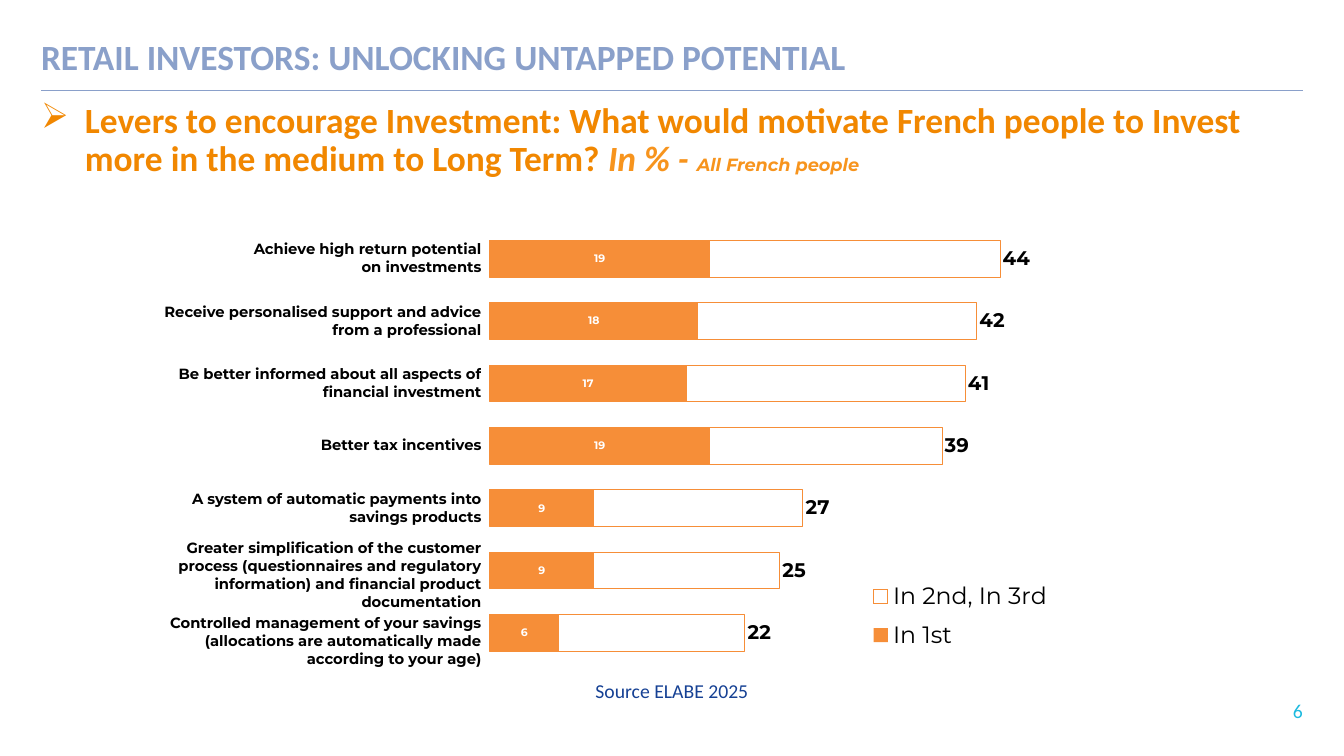
from dataclasses import dataclass

from lxml import etree
from pptx import Presentation
from pptx.chart.data import CategoryChartData
from pptx.dml.color import RGBColor
from pptx.enum.chart import XL_CHART_TYPE, XL_LABEL_POSITION, XL_LEGEND_POSITION
from pptx.enum.shapes import MSO_CONNECTOR
from pptx.enum.text import MSO_ANCHOR, PP_ALIGN
from pptx.oxml import parse_xml
from pptx.oxml.ns import nsdecls, qn
from pptx.util import Inches, Pt

BARS = XL_CHART_TYPE.BAR_CLUSTERED
CENTER, OUTSIDE = XL_LABEL_POSITION.CENTER, XL_LABEL_POSITION.OUTSIDE_END
LEGEND_RIGHT = XL_LEGEND_POSITION.RIGHT
STRAIGHT = MSO_CONNECTOR.STRAIGHT
MIDDLE, TOP = MSO_ANCHOR.MIDDLE, MSO_ANCHOR.TOP
LEFT, RIGHT = PP_ALIGN.LEFT, PP_ALIGN.RIGHT


@dataclass(frozen=True)
class Theme:
    text_font: str = "Calibri"
    chart_font: str = "Montserrat"
    title: str = "8AA0CA"
    question: str = "F18700"
    scope: str = "F7941D"
    bar: str = "F68E38"
    source: str = "164194"
    number: str = "1DBADF"
    black: str = "000000"
    white: str = "FFFFFF"
    heading_size: int = 36
    legend_size: int = 24
    note_size: int = 20
    scope_size: int = 18
    lever_size: int = 15
    first_size: int = 11


THEME = Theme()
WIDTH, HEIGHT = 18.98, 10.67
MARGIN = 0.58
ROW = 0.88
LEVERS = [
    ("Achieve high return potential\non investments", 19, 44),
    ("Receive personalised support and advice from a professional", 18, 42),
    ("Be better informed about all aspects of financial investment", 17, 41),
    ("Better tax incentives", 19, 39),
    ("A system of automatic payments into savings products", 9, 27),
    ("Greater simplification of the customer process (questionnaires and "
     "regulatory information) and financial product documentation", 9, 25),
    ("Controlled management of your savings (allocations are automatically "
     "made according to your age)", 6, 22),
]


def style(font, size, color, name=THEME.text_font, bold=False, italic=False):
    font.size, font.name, font.bold, font.italic = Pt(size), name, bold, italic
    font.color.rgb = RGBColor.from_string(color)


def add_text_frame(slide, box, inset=0.0, anchor=TOP):
    frame = slide.shapes.add_textbox(*map(Inches, box)).text_frame
    frame.word_wrap = True
    frame.vertical_anchor = anchor
    frame.margin_left = frame.margin_right = Inches(inset)
    frame.margin_top = frame.margin_bottom = Inches(inset / 2)
    return frame


def add_line_of_text(slide, box, text, size, color, align=LEFT, bold=False, **placing):
    paragraph = add_text_frame(slide, box, **placing).paragraphs[0]
    paragraph.text = text
    paragraph.alignment = align
    style(paragraph.font, size, color, bold=bold)


def add_header(slide, box):
    left, top, width, height = box
    add_line_of_text(slide, (left, top, width, 0.5),
                     "RETAIL INVESTORS: UNLOCKING UNTAPPED POTENTIAL",
                     THEME.heading_size, THEME.title, bold=True)
    rule = slide.shapes.add_connector(
        STRAIGHT, *map(Inches, (left, top + height, left + width, top + height)))
    rule.line.color.rgb = RGBColor.from_string(THEME.title)
    rule.line.width = Pt(1.5)
    etree.SubElement(rule.element.spPr, qn("a:effectLst"))


def add_question(slide, box):
    paragraph = add_text_frame(slide, box).paragraphs[0]
    properties = paragraph._p.get_or_add_pPr()
    indent = Inches(0.62)
    properties.set("marL", str(indent))
    properties.set("indent", str(-indent))
    etree.SubElement(properties, qn("a:buChar")).set("char", "➢")
    paragraph.line_spacing = 0.9
    question, unit, scope = (paragraph.add_run() for _ in range(3))
    question.text = ("Levers to encourage Investment: What would motivate French people "
                     "to Invest more in the medium to Long Term? ")
    unit.text = "In % - "
    scope.text = "All French people"
    style(question.font, THEME.heading_size, THEME.question, bold=True)
    style(unit.font, THEME.heading_size, THEME.scope, bold=True, italic=True)
    style(scope.font, THEME.scope_size, THEME.scope, THEME.chart_font, True, True)


def add_lever_names(slide, box):
    table = slide.shapes.add_table(len(LEVERS), 1, *map(Inches, box)).table
    table.first_row = table.horz_banding = False
    for row, (lever, _, _) in zip(table.rows, LEVERS):
        row.height = Inches(ROW)
        cell = row.cells[0]
        cell.fill.background()
        cell.vertical_anchor = MIDDLE
        cell.margin_left = cell.margin_right = cell.margin_top = cell.margin_bottom = 0
        cell.text = lever
        for paragraph in cell.text_frame.paragraphs:
            paragraph.alignment = RIGHT
            style(paragraph.font, THEME.lever_size, THEME.black, THEME.chart_font, bold=True)


def set_layout(part, position, x, y, w, h, target=""):
    """Place a chart part by shares of the chart area."""
    sizes = "".join(f'<c:{key} val="{value}"/>'
                    for key, value in (("x", x), ("y", y), ("w", w), ("h", h)))
    for old in part.findall(qn("c:layout")):
        part.remove(old)
    part.insert(position, parse_xml(
        f'<c:layout {nsdecls("c")}><c:manualLayout>{target}<c:xMode val="edge"/>'
        f'<c:yMode val="edge"/>{sizes}</c:manualLayout></c:layout>'))


def add_lever_chart(slide, box):
    data = CategoryChartData(number_format="0")
    data.categories = [str(rank) for rank in range(1, len(LEVERS) + 1)]
    data.add_series("In 1st", [first for _, first, _ in LEVERS])
    data.add_series("In 2nd, In 3rd", [total for _, _, total in LEVERS])
    chart = slide.shapes.add_chart(BARS, *map(Inches, box), data).chart
    chart.has_title = False
    style(chart.font, 10, THEME.black, THEME.chart_font)

    # Axes
    chart.category_axis.reverse_order = True
    chart.category_axis.visible = chart.value_axis.visible = False
    chart.value_axis.has_major_gridlines = False
    chart.value_axis.minimum_scale, chart.value_axis.maximum_scale = 0, 50

    # Bars: the outlined total lies over the filled first choice
    plot = chart.plots[0]
    plot.gap_width, plot.overlap, plot.vary_by_categories = 70, 100, False
    first, total = plot.series
    first.format.fill.solid()
    first.format.fill.fore_color.rgb = RGBColor.from_string(THEME.bar)
    total.format.fill.background()
    total.format.line.color.rgb = RGBColor.from_string(THEME.bar)
    total.format.line.width = Pt(0.75)
    for series, place, size, color in (
            (first, CENTER, THEME.first_size, THEME.white),
            (total, OUTSIDE, THEME.note_size, THEME.black)):
        labels = series.data_labels
        labels.show_value = True
        labels.position = place
        style(labels.font, size, color, THEME.chart_font, bold=True)

    # Legend
    chart.has_legend = True
    chart.legend.position = LEGEND_RIGHT
    chart.legend.include_in_layout = False
    style(chart.legend.font, THEME.legend_size, THEME.black, THEME.chart_font)
    set_layout(chart.legend._element, 1, 0.59, 0.79, 0.33, 0.2)
    plot_area = chart._chartSpace.chart.plotArea
    set_layout(plot_area, 0, 0, 0, 0.93, 1, '<c:layoutTarget val="inner"/>')


def add_footer(slide, box):
    left, top, width, height = box
    add_line_of_text(slide, (8.31, top, 5.93, 0.44), "Source ELABE 2025",
                     THEME.note_size, THEME.source, inset=0.1)
    add_line_of_text(slide, (left + width - 0.68, top + height - 0.34, 0.68, 0.34), "6",
                     THEME.note_size, THEME.number, RIGHT, anchor=MIDDLE)


def main():
    deck = Presentation()
    deck.slide_width, deck.slide_height = Inches(WIDTH), Inches(HEIGHT)
    slide = deck.slides.add_slide(deck.slide_layouts[6])
    content = WIDTH - 2 * MARGIN
    levers_height = ROW * len(LEVERS)
    add_header(slide, (MARGIN, 0.49, content, 0.79))
    add_question(slide, (MARGIN, 1.45, 17.6, 1.2))
    add_lever_names(slide, (2.21, 3.21, 4.59, levers_height))
    add_lever_chart(slide, (6.91, 3.21, 8.81, levers_height))
    add_footer(slide, (MARGIN, 9.53, content, 0.67))
    deck.save("out.pptx")


if __name__ == "__main__":
    main()
